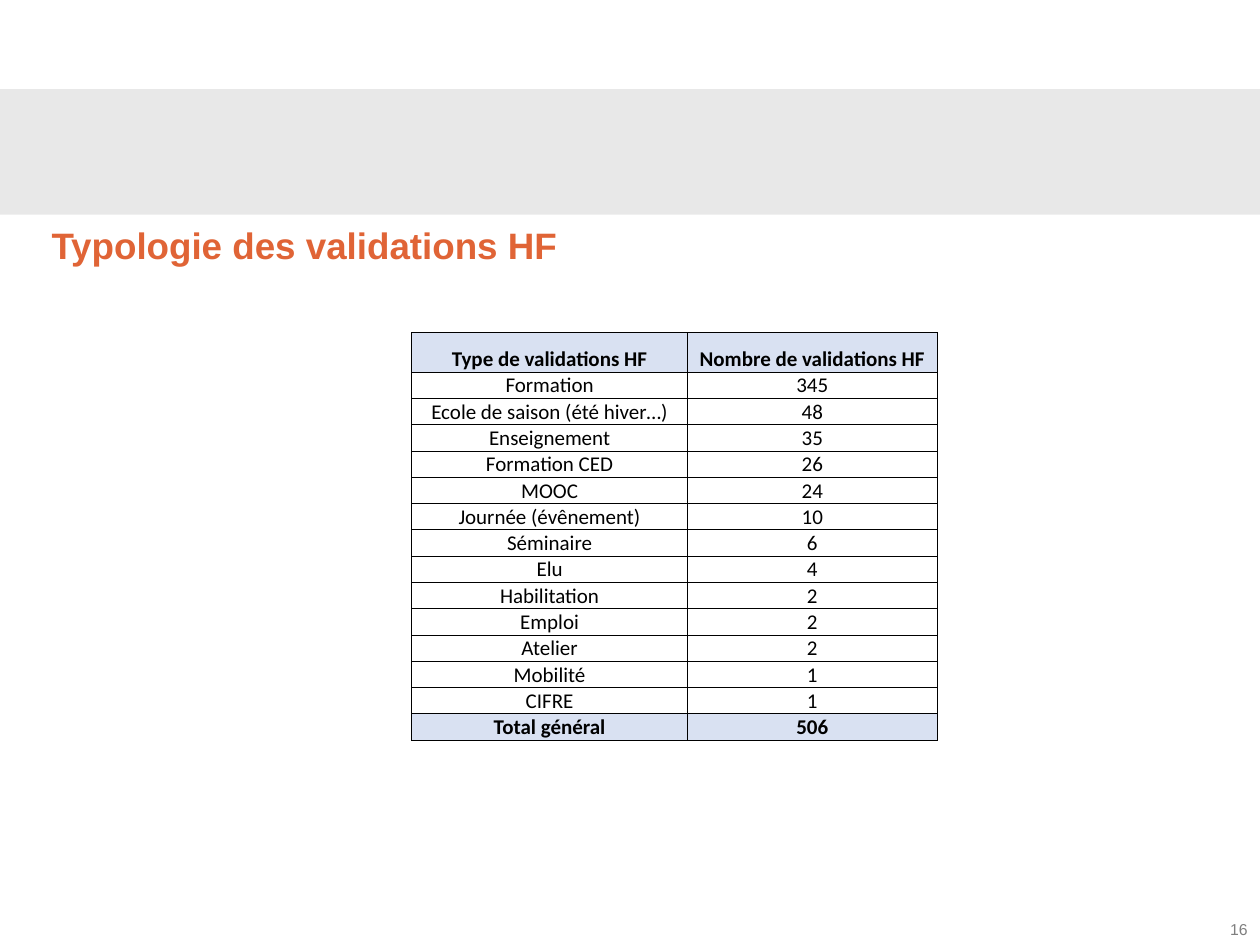
from lxml import etree
from pptx import Presentation
from pptx import util as u
from pptx.dml.color import RGBColor
from pptx.enum import shapes, text
from pptx.oxml import ns

COLORS = {
    "band": "D9D9D9",
    "title": "E06436",
    "number": "7F7F7F",
    "ink": "000000",
    "highlight": "D9E1F2",
}

HEADINGS = ("Type de validations HF", "Nombre de validations HF")
VALIDATIONS = [
    ("Formation", 345),
    ("Ecole de saison (été hiver…)", 48),
    ("Enseignement", 35),
    ("Formation CED", 26),
    ("MOOC", 24),
    ("Journée (évênement)", 10),
    ("Séminaire", 6),
    ("Elu", 4),
    ("Habilitation", 2),
    ("Emploi", 2),
    ("Atelier", 2),
    ("Mobilité", 1),
    ("CIFRE", 1),
]
TOTAL = ("Total général", sum(count for _, count in VALIDATIONS))


class SlideBuilder:
    TITLE = {"name": "Arial", "size": u.Pt(21), "bold": True}
    NUMBER = {"name": "Arial", "size": u.Pt(9)}
    CELL = {"name": "Calibri", "size": u.Pt(12)}
    CELL_BOX = {
        "margin_left": u.Cm(0.02),
        "margin_right": u.Cm(0.02),
        "margin_top": u.Cm(0.02),
        "margin_bottom": 0,
        "vertical_anchor": text.MSO_ANCHOR.BOTTOM,
    }

    def __init__(self, slide):
        self.slide = slide

    @staticmethod
    def apply(target, values):
        for name, value in values.items():
            setattr(target, name, value)

    @staticmethod
    def paint(fill, color):
        fill.solid()
        fill.fore_color.rgb = RGBColor.from_string(COLORS[color])

    def set_words(self, paragraph, words, style, color, align):
        paragraph.text = words
        paragraph.alignment = align
        self.apply(paragraph.font, style)
        paragraph.font.color.rgb = RGBColor.from_string(COLORS[color])

    def band(self, left, top, width, height, color, opacity):
        band = self.slide.shapes.add_shape(
            shapes.MSO_SHAPE.RECTANGLE, *map(u.Cm, (left, top, width, height)))
        band.shadow.inherit = False
        band.line.fill.background()
        self.paint(band.fill, color)
        tint = band._element.spPr.find(".//" + ns.qn("a:srgbClr"))
        etree.SubElement(tint, ns.qn("a:alpha"), val=str(opacity * 1000))

    def label(self, left, top, width, height, words, style, color,
              align=text.PP_ALIGN.LEFT, wrap=True):
        frame = self.slide.shapes.add_textbox(
            *map(u.Cm, (left, top, width, height))).text_frame
        frame.word_wrap = wrap
        self.set_words(frame.paragraphs[0], words, style, color, align)

    def border(self, cell):
        properties = cell._tc.get_or_add_tcPr()
        for position, side in enumerate(("lnL", "lnR", "lnT", "lnB")):
            line = etree.Element(ns.qn("a:" + side), w=str(u.Pt(0.5)))
            fill = etree.SubElement(line, ns.qn("a:solidFill"))
            etree.SubElement(fill, ns.qn("a:srgbClr"), val=COLORS["ink"])
            properties.insert(position, line)

    def table(self, left, top, widths, heights, rows):
        grid = self.slide.shapes.add_table(
            len(rows), len(widths), u.Cm(left), u.Cm(top),
            u.Cm(sum(widths)), u.Cm(sum(heights))).table
        self.apply(grid, {"first_row": False, "horz_banding": False})
        for column, width in zip(grid.columns, widths):
            column.width = u.Cm(width)
        for line, height, values in zip(grid.rows, heights, rows):
            line.height = u.Cm(height)
            strong = values in (HEADINGS, TOTAL)
            for cell, value in zip(line.cells, values):
                self.apply(cell, self.CELL_BOX)
                if strong:
                    self.paint(cell.fill, "highlight")
                else:
                    cell.fill.background()
                self.set_words(cell.text_frame.paragraphs[0], str(value),
                               {**self.CELL, "bold": strong}, "ink",
                               text.PP_ALIGN.CENTER)
                self.border(cell)


def main():
    deck = Presentation()
    deck.slide_width, deck.slide_height = u.Cm(25.4), u.Cm(19.05)
    builder = SlideBuilder(deck.slides.add_slide(deck.slide_layouts[6]))

    # Header band and page number
    builder.band(-0.03, 1.8, 25.43, 2.53, "band", 59)
    builder.label(24.49, 18.42, 0.91, 0.63, "16", builder.NUMBER, "number",
                  text.PP_ALIGN.RIGHT, wrap=False)

    # Title
    builder.label(0.79, 4.37, 23.83, 1.5, "Typologie des validations HF",
                  builder.TITLE, "title")

    # Validations by type, with their total
    rows = [HEADINGS, *VALIDATIONS, TOTAL]
    heights = [0.79] + [0.53] * (len(rows) - 1)
    builder.table(8.3, 6.71, (5.56, 5.03), heights, rows)

    deck.save("out.pptx")


if __name__ == "__main__":
    main()
